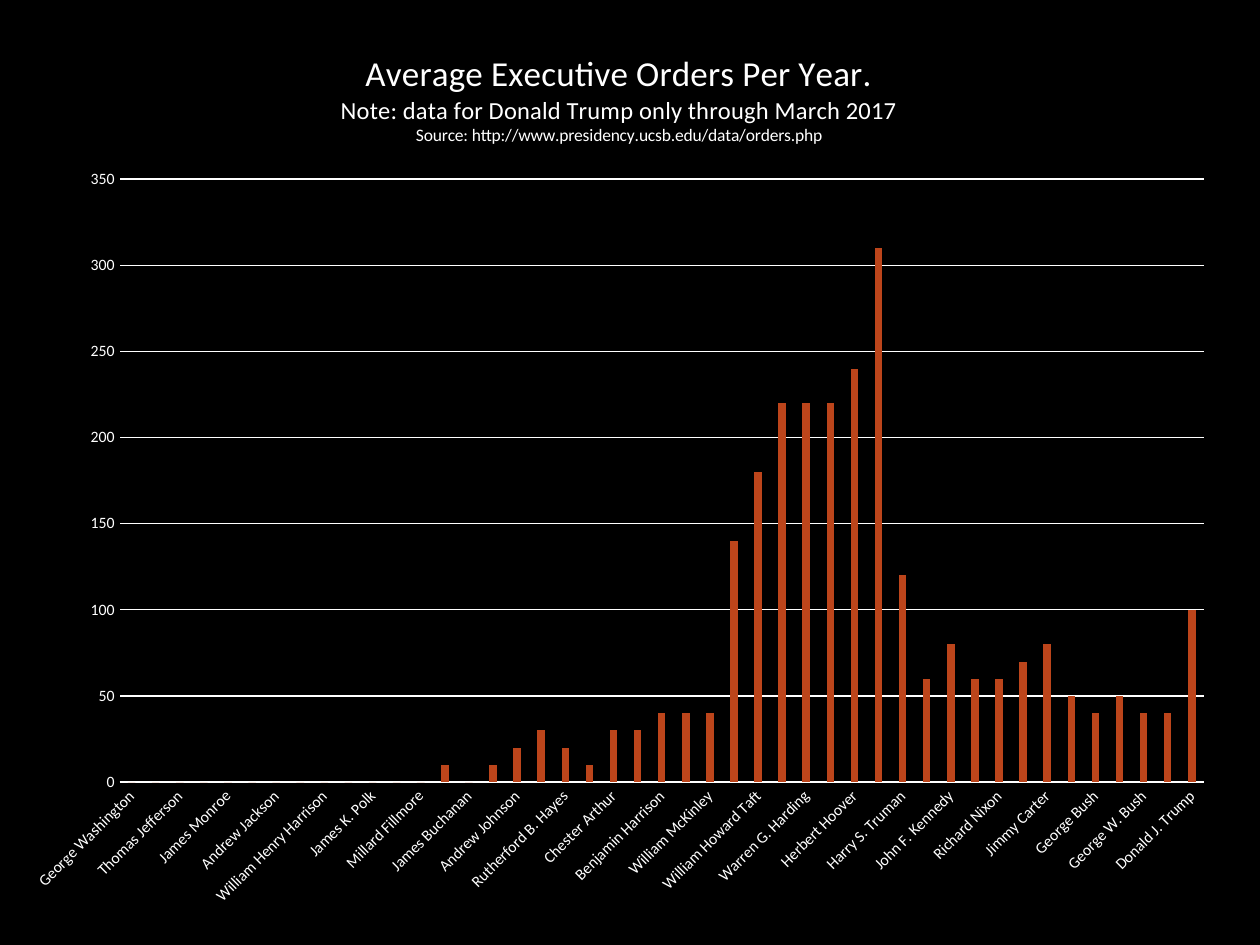
from dataclasses import dataclass

from lxml import etree
from pptx import Presentation
from pptx.chart.data import CategoryChartData
from pptx.dml.color import RGBColor
from pptx.enum.chart import XL_CHART_TYPE, XL_TICK_MARK
from pptx.oxml.ns import qn
from pptx.util import Cm, Pt

COLUMN_CLUSTERED = XL_CHART_TYPE.COLUMN_CLUSTERED
NO_TICK = XL_TICK_MARK.NONE

ORDERS_PER_YEAR = {
    "George Washington": 0, "John Adams": 0, "Thomas Jefferson": 0,
    "James Madison": 0, "James Monroe": 0, "John Quincy Adams": 0,
    "Andrew Jackson": 0, "Martin van Buren": 0, "William Henry Harrison": 0,
    "John Tyler": 0, "James K. Polk": 0, "Zachary Taylor": 0,
    "Millard Fillmore": 0, "Franklin Pierce": 10, "James Buchanan": 0,
    "Abraham Lincoln": 10, "Andrew Johnson": 20, "Ulysses S. Grant": 30,
    "Rutherford B. Hayes": 20, "James Garfield": 10, "Chester Arthur": 30,
    "Grover Cleveland - I": 30, "Benjamin Harrison": 40, "Grover Cleveland - II": 40,
    "William McKinley": 40, "Theodore Roosevelt": 140, "William Howard Taft": 180,
    "Woodrow Wilson": 220, "Warren G. Harding": 220, "Calvin Coolidge": 220,
    "Herbert Hoover": 240, "Franklin D. Roosevelt": 310, "Harry S. Truman": 120,
    "Dwight D. Eisenhower": 60, "John F. Kennedy": 80, "Lyndon B. Johnson": 60,
    "Richard Nixon": 60, "Gerald R. Ford": 70, "Jimmy Carter": 80,
    "Ronald Reagan": 50, "George Bush": 40, "William J. Clinton": 50,
    "George W. Bush": 40, "Barack Obama": 40, "Donald J. Trump": 100,
}
TITLE_LINES = (
    "Average Executive Orders Per Year.",
    "Note: data for Donald Trump only through March 2017",
    "Source: http://www.presidency.ucsb.edu/data/orders.php",
)
CHART_WIDTH = Cm(24.56)
CHART_HEIGHT = Cm(18.21)


@dataclass(frozen=True)
class Theme:
    """Colours, font and type sizes of the slide."""

    background: RGBColor = RGBColor(0x00, 0x00, 0x00)
    foreground: RGBColor = RGBColor(0xFF, 0xFF, 0xFF)
    bar: RGBColor = RGBColor(0xBC, 0x45, 0x1B)
    font: str = "Calibri"
    title_sizes: tuple = (20, 14, 10)
    chart_size: int = 10
    axis_size: int = 9
    line_width: float = 0.75


class SlideBuilder:
    """Draws styled elements on the current slide."""

    def __init__(self, slide, theme):
        self.slide = slide
        self.theme = theme

    def background(self):
        fill = self.slide.background.fill
        fill.solid()
        fill.fore_color.rgb = self.theme.background

    def style_font(self, font, size):
        font.name = self.theme.font
        font.size = Pt(size)
        font.bold = False
        font.color.rgb = self.theme.foreground

    def style_line(self, line):
        line.color.rgb = self.theme.foreground
        line.width = Pt(self.theme.line_width)

    def make_layout(self, parent, **settings):
        for old_layout in parent.findall(qn("c:layout")):
            parent.remove(old_layout)
        layout = etree.Element(qn("c:layout"))
        manual = etree.SubElement(layout, qn("c:manualLayout"))
        for name, value in settings.items():
            etree.SubElement(manual, qn(f"c:{name}"), val=str(value))
        return layout

    def column_chart(self, left, top, values):
        data = CategoryChartData()
        data.categories = list(values)
        data.add_series("Series 1", list(values.values()))
        frame = self.slide.shapes.add_chart(
            COLUMN_CLUSTERED, left, top, CHART_WIDTH, CHART_HEIGHT, data)
        chart = frame.chart
        self.style_font(chart.font, self.theme.chart_size)
        chart.has_legend = False
        plot = chart.plots[0]
        plot.gap_width = 219
        plot.overlap = -27
        plot.vary_by_categories = False
        fill = plot.series[0].format.fill
        fill.solid()
        fill.fore_color.rgb = self.theme.bar
        return chart

    def plot_box(self, chart, left, top, width, height):
        plot_area = chart._chartSpace.chart.plotArea
        plot_area.insert(0, self.make_layout(
            plot_area, layoutTarget="inner", xMode="edge", yMode="edge",
            x=left / CHART_WIDTH, y=top / CHART_HEIGHT,
            w=width / CHART_WIDTH, h=height / CHART_HEIGHT))

    def chart_title(self, chart, left, top, lines):
        title = chart.chart_title
        title.include_in_layout = False
        title.text_frame.text = "\n".join(lines)
        for paragraph, size in zip(title.text_frame.paragraphs, self.theme.title_sizes):
            self.style_font(paragraph.font, size)
            for run in paragraph.runs:
                self.style_font(run.font, size)
        element = title._element
        layout = self.make_layout(
            element, xMode="edge", yMode="edge",
            x=left / CHART_WIDTH, y=top / CHART_HEIGHT)
        element.find(qn("c:tx")).addnext(layout)

    def axes(self, chart):
        for axis in (chart.category_axis, chart.value_axis):
            axis.major_tick_mark = NO_TICK
            axis.minor_tick_mark = NO_TICK
            self.style_font(axis.tick_labels.font, self.theme.axis_size)
        names = chart.category_axis
        self.style_line(names.format.line)
        names._element.find(qn("c:txPr")).find(qn("a:bodyPr")).set("rot", "-2700000")
        scale = chart.value_axis
        scale.minimum_scale = 0
        scale.maximum_scale = 350
        scale.major_unit = 50
        scale.format.line.fill.background()
        scale.has_major_gridlines = True
        self.style_line(scale.major_gridlines.format.line)


def main():
    presentation = Presentation()
    presentation.slide_width = Cm(25.4)
    presentation.slide_height = Cm(19.05)
    slide = presentation.slides.add_slide(presentation.slide_layouts[6])
    builder = SlideBuilder(slide, Theme())
    builder.background()
    chart = builder.column_chart(Cm(0.2), Cm(0.43), ORDERS_PER_YEAR)
    builder.plot_box(chart, Cm(2.21), Cm(3.18), Cm(21.86), Cm(12.16))
    builder.chart_title(chart, Cm(6.59), Cm(0.5), TITLE_LINES)
    builder.axes(chart)
    presentation.save("out.pptx")


if __name__ == "__main__":
    main()
